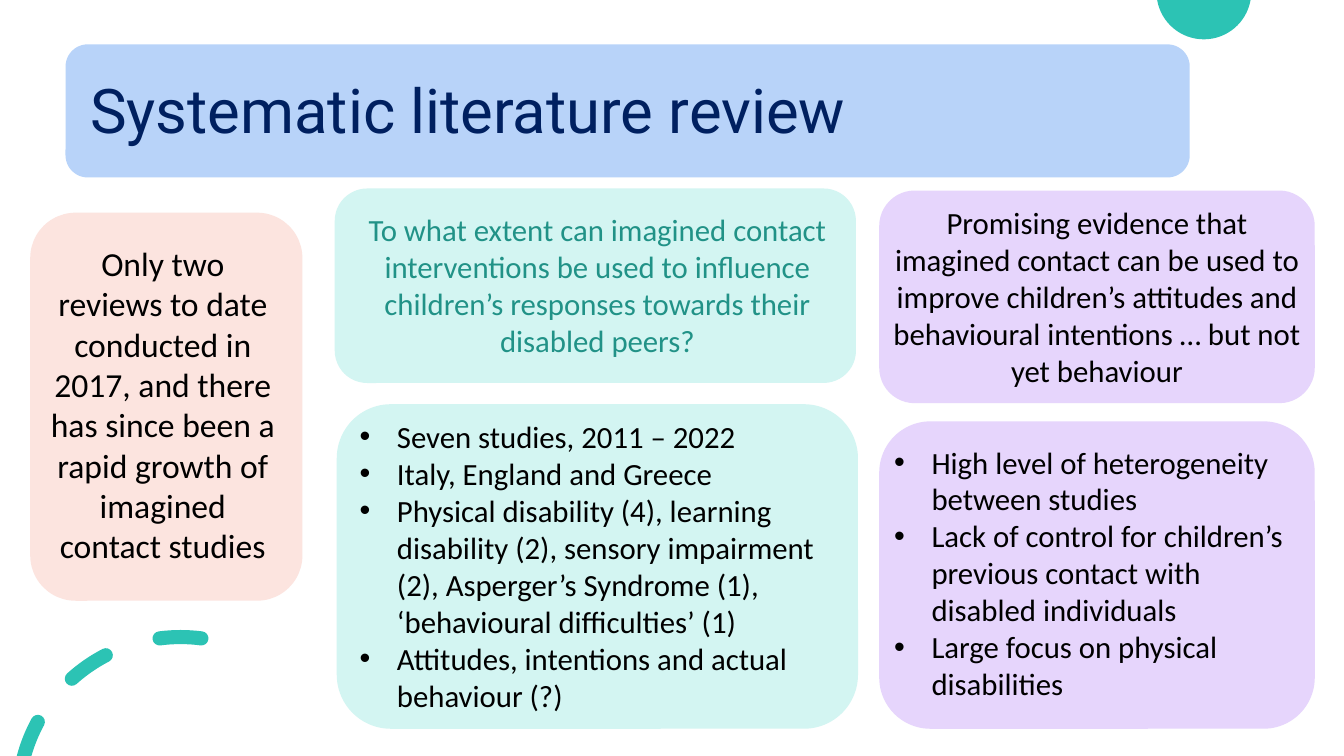
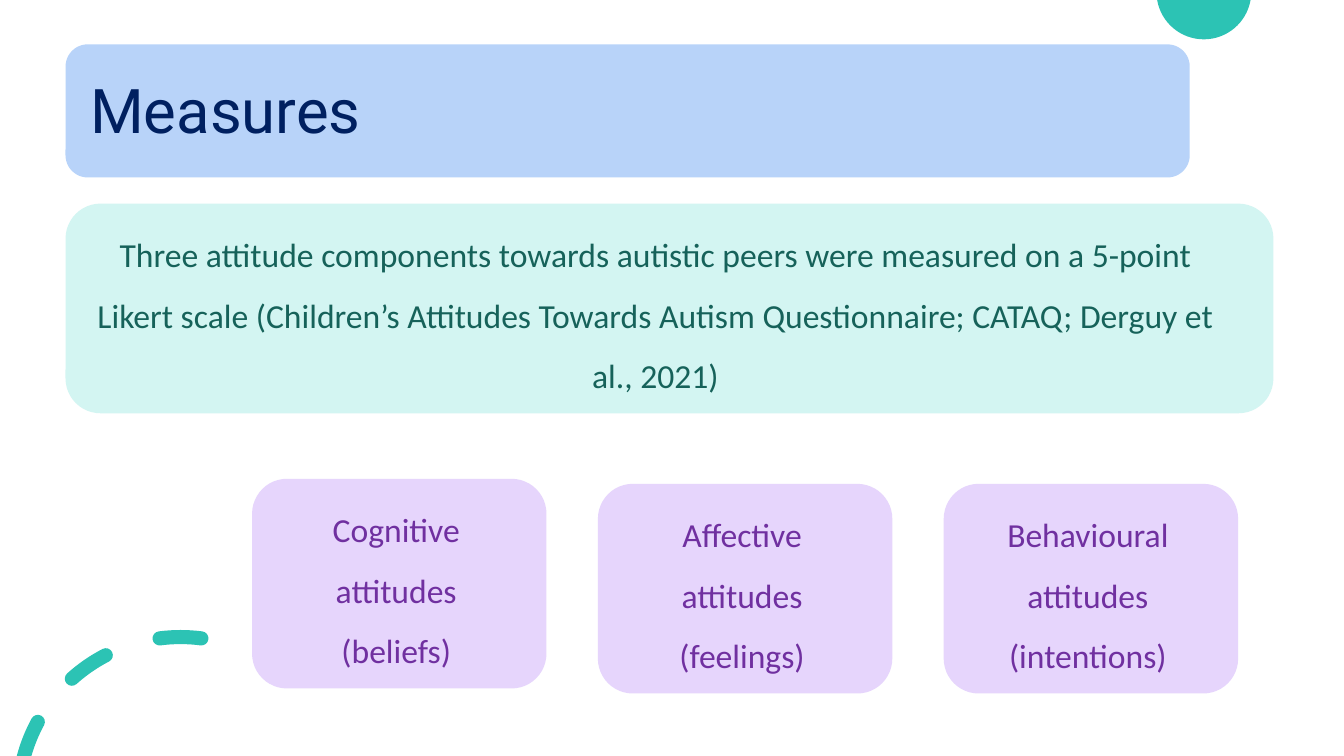
from math import acos, cos, degrees, radians, sin, tan

from lxml import etree
from pptx import Presentation
from pptx.dml.color import RGBColor
from pptx.enum.shapes import MSO_SHAPE
from pptx.enum.text import MSO_ANCHOR, PP_ALIGN
from pptx.oxml.ns import qn
from pptx.util import Emu, Pt

ROUND = MSO_SHAPE.ROUNDED_RECTANGLE
TOP, MIDDLE = MSO_ANCHOR.TOP, MSO_ANCHOR.MIDDLE
LEFT, CENTER = PP_ALIGN.LEFT, PP_ALIGN.CENTER

PX = 9144  # EMU per px, 100 px to the inch
SLIDE_W, SLIDE_H = 1333, 750
COLORS = {
    "teal": "2CC3B4", "blue": "B8D3F9", "peach": "FCE4DF", "mint": "D3F5F2",
    "lilac": "E6D5FC", "navy": "002060", "black": "000000",
    "question": "219287", "pine": "16625A", "purple": "7030A0",
}
TITLE_BAND = (65, 44, 1115, 132)
BULLET_INDENT = 37

# Corner decorations: centre x, centre y, radius
DISC = (1194, -8, 47)
RING = (179, 793, 161)
RING_HALF = 7
DASHES = [(-7.4, 7.4), (27.4, 42)]  # degrees left of the ring's top
CUT_DASH_START = 61.5  # this dash runs off the bottom of the slide

REVIEW_CARDS = [
    dict(box=(30, 211, 270, 385), fill="peach", size=24, inset=(4, 0, 11, 5),
         text=["Only two reviews to date conducted in 2017, and there has since "
               "been a rapid growth of imagined contact studies"]),
    dict(box=(332, 187, 517, 193), fill="mint", color="question", inset=(14, 0, 10, 2),
         text=["To what extent can imagined contact interventions be used to "
               "influence children’s responses towards their disabled peers?"]),
    dict(box=(334, 401, 517, 322), fill="mint", inset=(7, 0, 0, 2), bullets=True,
         text=["Seven studies, 2011 – 2022",
               "Italy, England and Greece",
               "Physical disability (4), learning disability (2), sensory impairment "
               "(2), Asperger’s Syndrome (1), ‘behavioural difficulties’ (1)",
               "Attitudes, intentions and actual behaviour (?)"]),
    dict(box=(872, 189, 432, 211), fill="lilac", inset=(0, 0, 0, 2),
         text=["Promising evidence that imagined contact can be used to improve "
               "children’s attitudes and behavioural intentions … but not yet behaviour"]),
    dict(box=(872, 418, 432, 305), fill="lilac", inset=(0, 0, 0, 5), bullets=True,
         text=["High level of heterogeneity between studies",
               "Lack of control for children’s previous contact with disabled individuals",
               "Large focus on physical disabilities"]),
]

SCALE_TEXT = ("Three attitude components towards autistic peers were measured on a "
              "5-point Likert scale (Children’s Attitudes Towards Autism "
              "Questionnaire; CATAQ; Derguy et al., 2021)")
COMPONENTS = [  # text, top
    ("Cognitive attitudes (beliefs)", 475),
    ("Affective attitudes (feelings)", 480),
    ("Behavioural attitudes (intentions)", 480),
]
COMPONENT_LEFT, COMPONENT_PITCH = 250, 343
MEASURE = dict(size=24, spacing=1.5, anchor=TOP)
MEASURE_CARDS = [
    dict(box=(65, 202, 1198, 208), fill="mint", color="pine", inset=(5, 0, 33, 0),
         text=[SCALE_TEXT], **MEASURE),
] + [
    dict(box=(COMPONENT_LEFT + i * COMPONENT_PITCH, top, 292, 208), fill="lilac",
         color="purple", inset=(42, 0, 48, 0), text=[text], **MEASURE)
    for i, (text, top) in enumerate(COMPONENTS)
]

SLIDES = [("Systematic literature review", REVIEW_CARDS), ("Measures", MEASURE_CARDS)]


def rgb(name):
    return RGBColor.from_string(COLORS[name])


def paint(sp, fill):
    sp.shadow.inherit = False
    sp.fill.solid()
    sp.fill.fore_color.rgb = rgb(fill)
    sp.line.fill.background()


def add_bullet(p):
    pPr = p._p.get_or_add_pPr()
    pPr.set("marL", str(BULLET_INDENT * PX))
    pPr.set("indent", str(-BULLET_INDENT * PX))
    etree.SubElement(pPr, qn("a:buFont")).set("typeface", "Arial")
    etree.SubElement(pPr, qn("a:buChar")).set("char", "•")


def add_card(s, box, fill, text, color="black", size=22, font="Calibri", spacing=None,
             anchor=MIDDLE, align=CENTER, inset=(0, 0, 0, 0), bullets=False):
    """Rounded box holding text; inset is left, top, right, bottom."""
    sp = s.shapes.add_shape(ROUND, *(Emu(v * PX) for v in box))
    paint(sp, fill)
    tf = sp.text_frame
    tf.word_wrap = True
    tf.vertical_anchor = anchor
    (tf.margin_left, tf.margin_top,
     tf.margin_right, tf.margin_bottom) = (Emu(v * PX) for v in inset)
    for i, line in enumerate(text):
        p = tf.paragraphs[0] if i == 0 else tf.add_paragraph()
        p.alignment = LEFT if bullets else align
        if spacing:
            p.line_spacing = spacing
        if bullets:
            add_bullet(p)
        r = p.add_run()
        r.text = line
        r.font.size = Pt(size)
        r.font.name = font
        r.font.color.rgb = rgb(color)


def arc(cx, cy, radius, start, end):
    """Bézier points of an arc, in degrees to the left of straight up."""
    a, b = radians(start), radians(end)
    k = 4 / 3 * tan((b - a) / 4)

    def point(t, pull):
        return (cx - radius * (sin(t) + pull * cos(t)),
                cy - radius * (cos(t) - pull * sin(t)))

    return [point(a, 0), point(a, k), point(b, -k), point(b, 0)]


def angle_at(circle, y):
    cx, cy, radius = circle
    return degrees(acos((cy - y) / radius))


def ring_arc(offset, start, end):
    cx, cy, radius = RING
    return arc(cx, cy, radius + offset, start, end)


def cap(at, turn):
    """Half circle round the ring's middle line at one end of a dash."""
    x, y = ring_arc(0, at, at)[0]
    return [arc(x, y, RING_HALF, at + t, at + t + 90) for t in (turn, turn + 90)]


def dash_arcs(start, end):
    return [ring_arc(RING_HALF, start, end), *cap(end, 0),
            ring_arc(-RING_HALF, end, start), *cap(start, 180)]


def cut_dash_arcs(start):
    cx, cy, radius = RING
    outer, inner = (angle_at((cx, cy, radius + d), SLIDE_H)
                    for d in (RING_HALF, -RING_HALF))
    return [ring_arc(RING_HALF, start, outer), ring_arc(-RING_HALF, inner, start),
            *cap(start, 180)]


def disc_arcs():
    edge = angle_at(DISC, 0)
    return [arc(*DISC, edge, 180), arc(*DISC, 180, 360 - edge)]


def add_outlines(s, outlines):
    """One filled freeform; each outline is a list of arcs joined end to end."""
    builder, kinds = None, []
    for arcs in outlines:
        start = last = tuple(round(v * PX) for v in arcs[0][0])
        if builder is None:
            builder = s.shapes.build_freeform(*start, scale=1.0)
        else:
            builder.move_to(*start)
        for curve in arcs:
            first, *rest = [tuple(round(v * PX) for v in pt) for pt in curve]
            if max(abs(first[0] - last[0]), abs(first[1] - last[1])) > PX:
                builder.add_line_segments([first], close=False)
                kinds.append("line")
            builder.add_line_segments(rest, close=False)
            kinds.append("curve")
            last = rest[-1]
        builder.add_line_segments([start], close=True)
        kinds.append("line")
    sp = builder.convert_to_shape()
    lines = list(sp._element.iter(qn("a:lnTo")))
    for kind in kinds:
        count = 3 if kind == "curve" else 1
        group, lines = lines[:count], lines[count:]
        if kind == "curve":
            bezier = etree.Element(qn("a:cubicBezTo"))
            group[0].addprevious(bezier)
            for line in group:
                bezier.append(line[0])
                line.getparent().remove(line)
    paint(sp, "teal")


def add_slide(prs, title, cards):
    s = prs.slides.add_slide(prs.slide_layouts[6])
    add_outlines(s, [disc_arcs()])
    add_outlines(s, [cut_dash_arcs(CUT_DASH_START)] + [dash_arcs(*d) for d in DASHES])
    add_card(s, TITLE_BAND, "blue", [title], color="navy", size=44, font="Roboto",
             spacing=0.9, align=LEFT, inset=(18, 5, 0, 0))
    for card in cards:
        add_card(s, **card)


def main():
    prs = Presentation()
    prs.slide_width, prs.slide_height = Emu(SLIDE_W * PX), Emu(SLIDE_H * PX)
    for title, cards in SLIDES:
        add_slide(prs, title, cards)
    prs.save("out.pptx")


if __name__ == "__main__":
    main()
